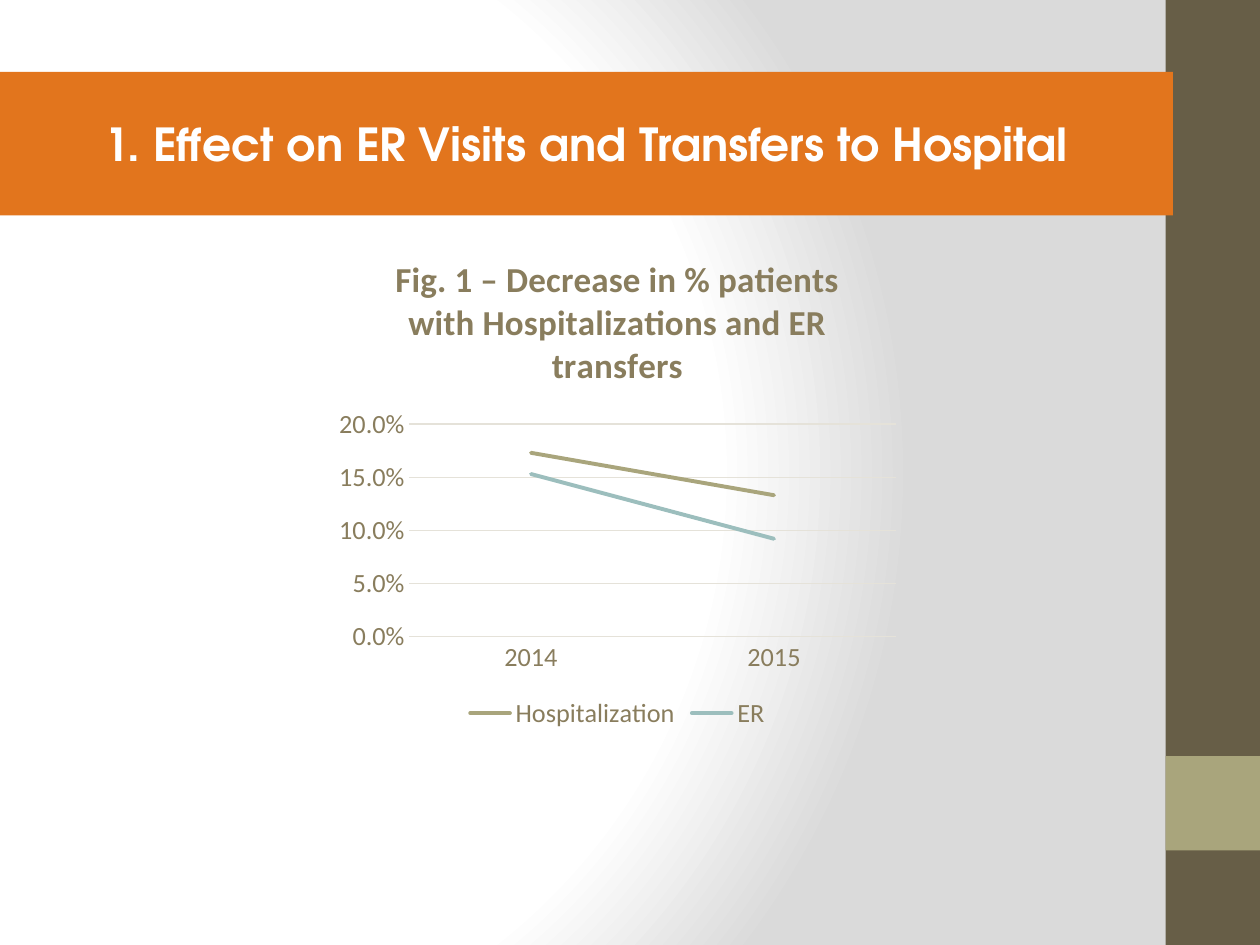
import dataclasses

import pptx
import pptx.chart.data
import pptx.dml.color
import pptx.enum.chart
import pptx.enum.shapes
import pptx.enum.text
import pptx.oxml
import pptx.oxml.ns
import pptx.util

WIDTH, HEIGHT = pptx.util.Inches(10), pptx.util.Inches(7.5)
COLORS = {
    "white": "FFFFFF", "gray": "DADADA", "brown": "675E47", "olive": "A9A57C",
    "orange": "E2751D", "teal": "9CBEBD", "label": "897D5D", "grid": "E5E2D9",
}


@dataclasses.dataclass
class Band:
    """A filled rectangle; lengths are shares of the slide's size."""
    left: float
    top: float
    width: float
    height: float
    color: str
    text: str = ""


@dataclasses.dataclass
class Trend:
    name: str
    values: tuple[float, ...]
    color: str


BANDS = [
    Band(0.925, 0, 0.075, 1, "brown"),
    Band(0.925, 0.8, 0.075, 0.1, "olive"),
    Band(0, 0.076, 0.931, 0.152, "orange", "1. Effect on ER Visits and Transfers to Hospital"),
]
YEARS = ["2014", "2015"]
TRENDS = [
    Trend("Hospitalization", (0.173, 0.133), "olive"),
    Trend("ER", (0.153, 0.092), "teal"),
]
CHART_TITLE = "Fig. 1 – Decrease in % patients with Hospitalizations and ER transfers"


def rgb(color: str) -> pptx.dml.color.RGBColor:
    return pptx.dml.color.RGBColor.from_string(COLORS[color])


def style_font(font, size: float, color: str, name: str = "Calibri", bold: bool = False) -> None:
    font.size = pptx.util.Pt(size)
    font.name = name
    font.bold = bold
    font.color.rgb = rgb(color)


def style_line(line, color: str, width: float) -> None:
    line.color.rgb = rgb(color)
    line.width = pptx.util.Pt(width)


def paint_background(slide) -> None:
    """Fill the background with a circular white-to-gray gradient."""
    slide.background.fill.solid()
    properties = slide.element.find(".//" + pptx.oxml.ns.qn("p:bgPr"))
    stops = "".join(
        f'<a:gs pos="{share * 1000}"><a:srgbClr val="{COLORS[color]}"/></a:gs>'
        for share, color in ((0, "white"), (75, "white"), (100, "gray"))
    )
    gradient = pptx.oxml.parse_xml(
        f'<a:gradFill {pptx.oxml.ns.nsdecls("a")} rotWithShape="1"><a:gsLst>{stops}</a:gsLst>'
        '<a:path path="circle"><a:fillToRect l="20000" t="50000" r="100000" b="50000"/>'
        "</a:path></a:gradFill>"
    )
    properties.replace(properties[0], gradient)


def draw_band(slide, band: Band) -> None:
    shape = slide.shapes.add_shape(
        pptx.enum.shapes.MSO_SHAPE.RECTANGLE,
        int(band.left * WIDTH), int(band.top * HEIGHT),
        int(band.width * WIDTH), int(band.height * HEIGHT),
    )
    shape.shadow.inherit = False
    shape.fill.solid()
    shape.fill.fore_color.rgb = rgb(band.color)
    shape.line.fill.background()
    if band.text:
        frame = shape.text_frame
        frame.text = band.text
        frame.word_wrap = True
        frame.vertical_anchor = pptx.enum.text.MSO_ANCHOR.MIDDLE
        heading = frame.paragraphs[0]
        heading.alignment = pptx.enum.text.PP_ALIGN.CENTER
        style_font(heading.runs[0].font, 26, "white", "TeX Gyre Adventor", True)


def draw_trends(slide) -> None:
    data = pptx.chart.data.CategoryChartData(number_format="0.0%")
    data.categories = YEARS
    for trend in TRENDS:
        data.add_series(trend.name, trend.values)
    chart = slide.shapes.add_chart(
        pptx.enum.chart.XL_CHART_TYPE.LINE,
        int(0.26 * WIDTH), int(0.244 * HEIGHT), int(0.46 * WIDTH), int(0.533 * HEIGHT), data,
    ).chart
    style_font(chart.font, 15, "label")

    chart.has_title = True
    title = chart.chart_title.text_frame
    title.text = CHART_TITLE
    style_font(title.paragraphs[0].runs[0].font, 20, "label", bold=True)
    chart.chart_title.include_in_layout = False

    chart.has_legend = True
    chart.legend.position = pptx.enum.chart.XL_LEGEND_POSITION.BOTTOM
    chart.legend.include_in_layout = False
    style_font(chart.legend.font, 15, "label")

    for axis in (chart.category_axis, chart.value_axis):
        axis.major_tick_mark = pptx.enum.chart.XL_TICK_MARK.NONE
        axis.minor_tick_mark = pptx.enum.chart.XL_TICK_MARK.NONE
        style_font(axis.tick_labels.font, 15, "label")
    style_line(chart.category_axis.format.line, "grid", 0.75)
    percent = chart.value_axis
    percent.format.line.fill.background()
    percent.has_major_gridlines = True
    style_line(percent.major_gridlines.format.line, "grid", 0.75)
    percent.minimum_scale, percent.maximum_scale, percent.major_unit = 0, 0.2, 0.05
    percent.tick_labels.number_format = "0.0%"
    percent.tick_labels.number_format_is_linked = False

    for trend, series in zip(TRENDS, chart.plots[0].series):
        series.smooth = False
        series.marker.style = pptx.enum.chart.XL_MARKER_STYLE.NONE
        style_line(series.format.line, trend.color, 2.25)
        series.format.line._get_or_add_ln().set("cap", "rnd")


def main() -> None:
    deck = pptx.Presentation()
    deck.slide_width, deck.slide_height = WIDTH, HEIGHT
    slide = deck.slides.add_slide(deck.slide_layouts[6])
    paint_background(slide)
    for band in BANDS:
        draw_band(slide, band)
    draw_trends(slide)
    deck.save("out.pptx")


if __name__ == "__main__":
    main()
